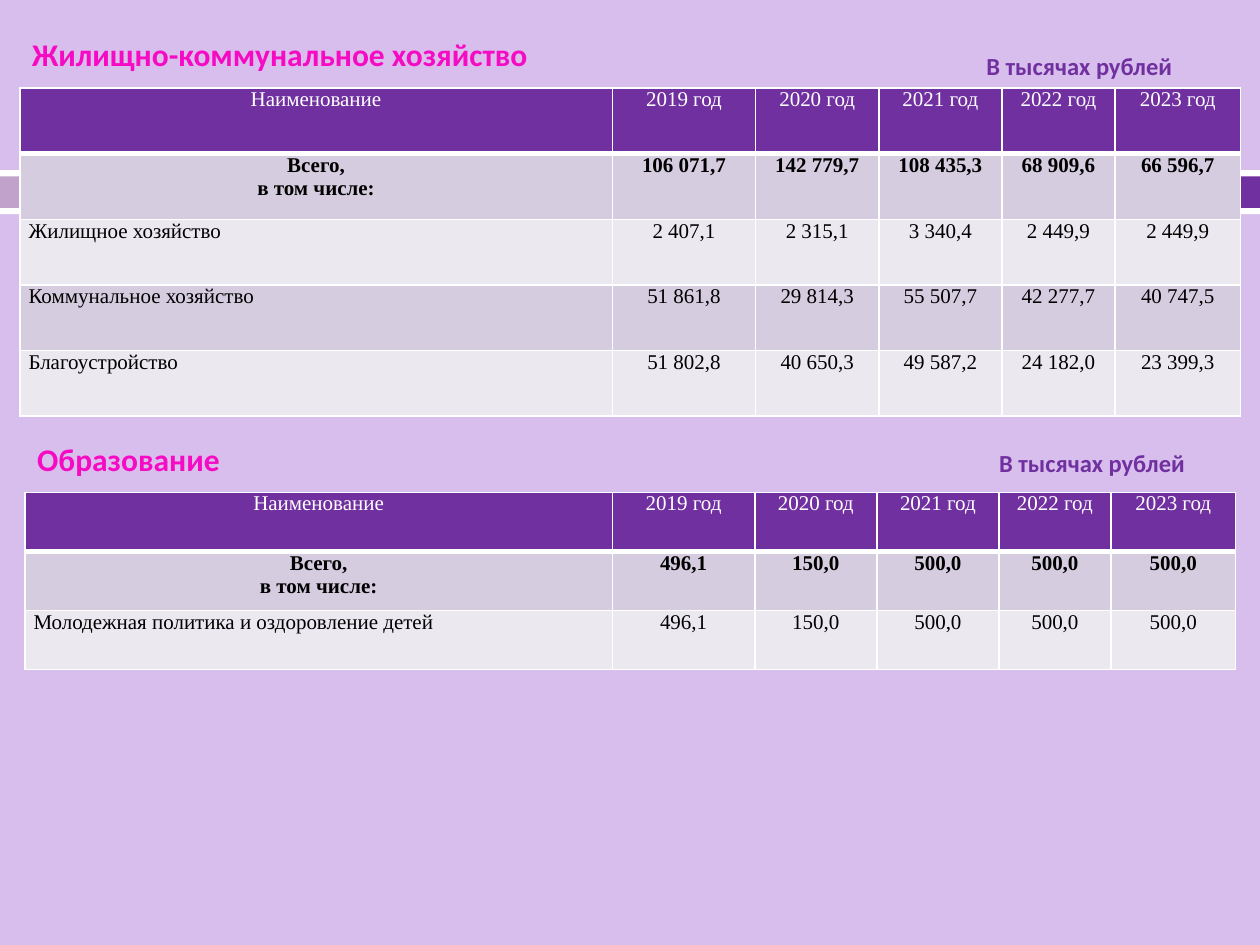
"""Build a slide with two budget tables: housing and utilities, and education."""
import pptx
import pptx.util
import pptx.dml.color
import pptx.enum.shapes
import pptx.enum.text
import pptx.oxml.ns
import lxml.etree

Pt = pptx.util.Pt
ALIGN = pptx.enum.text.PP_ALIGN

COLORS = {
    "background": "D8BEEC", "white": "FFFFFF", "lilac": "C0A2CA",
    "purple": "7030A0", "pink": "F60AC3", "black": "000000",
    "dark_band": "D5CDDF", "light_band": "EBE8F0",
}

HEADER = ("Наименование", "2019 год", "2020 год", "2021 год", "2022 год", "2023 год")
TOTAL = "Всего,\nв том числе:"
UNITS = "В тысячах рублей"

BANDS = [
    (0, 97.2, 720, 25.2, "white"),
    (0, 100.8, 41.76, 18, "lilac"),
    (46.8, 100.8, 673.2, 18, "purple"),
]

TABLES = [
    {
        "at": (11.3, 50.4), "row_height": 37.5,
        "widths": (338.6, 81.9, 70.4, 70.4, 64.6, 71.8),
        "rows": [
            HEADER,
            (TOTAL, "106 071,7", "142 779,7", "108 435,3", "68 909,6", "66 596,7"),
            ("Жилищное хозяйство", "2 407,1", "2 315,1", "3 340,4", "2 449,9", "2 449,9"),
            ("Коммунальное хозяйство", "51 861,8", "29 814,3", "55 507,7", "42 277,7", "40 747,5"),
            ("Благоустройство", "51 802,8", "40 650,3", "49 587,2", "24 182,0", "23 399,3"),
        ],
    },
    {
        "at": (14.2, 281.3), "row_height": 33.8,
        "widths": (335.8, 81.3, 69.8, 69.8, 63.9, 71.4),
        "rows": [
            HEADER,
            (TOTAL, "496,1", "150,0", "500,0", "500,0", "500,0"),
            ("Молодежная политика и оздоровление детей", "496,1", "150,0", "500,0", "500,0", "500,0"),
        ],
    },
]

LABELS = [
    ("Жилищно-коммунальное хозяйство", 11.3, 16.6, 300.2, 29.1, 18, "pink", False),
    ("Образование", 14.2, 247.7, 119.5, 29.1, 18, "pink", False),
    (UNITS, 556.6, 25.9, 163.4, 33.8, 14, "purple", True),
    (UNITS, 563.8, 252.7, 130.3, 33.8, 14, "purple", True),
]


def rgb(name):
    return pptx.dml.color.RGBColor.from_string(COLORS[name])


def paint(fill, name):
    fill.solid()
    fill.fore_color.rgb = rgb(name)


def style_font(font, name, size, color, bold):
    font.name, font.size, font.bold = name, Pt(size), bold
    font.color.rgb = rgb(color)


def add_borders(cell, bottom):
    tc_pr = cell._tc.get_or_add_tcPr()
    qn = pptx.oxml.ns.qn
    for side, width in (("L", 1), ("R", 1), ("T", 1), ("B", bottom)):
        ln = lxml.etree.SubElement(tc_pr, qn(f"a:ln{side}"), w=str(Pt(width)))
        solid = lxml.etree.SubElement(ln, qn("a:solidFill"))
        lxml.etree.SubElement(solid, qn("a:srgbClr"), val=COLORS["white"])


def fill_cell(cell, text, row, col):
    header = row == 0
    add_borders(cell, 3 if header else 1)
    paint(cell.fill, "purple" if header else "dark_band" if row % 2 else "light_band")
    cell.margin_left = cell.margin_right = Pt(5)
    cell.margin_top = cell.margin_bottom = 0
    cell.text = text
    for p in cell.text_frame.paragraphs:
        p.alignment = ALIGN.JUSTIFY if col == 0 and row > 1 else ALIGN.CENTER
        style_font(p.font, "Times New Roman", 12, "white" if header else "black", row == 1)


def add_budget_table(slide, data):
    rows, widths, height = data["rows"], data["widths"], data["row_height"]
    left, top = data["at"]
    table = slide.shapes.add_table(
        len(rows), len(widths), Pt(left), Pt(top),
        Pt(sum(widths)), Pt(height * len(rows))).table
    for column, width in zip(table.columns, widths):
        column.width = Pt(width)
    for i, values in enumerate(rows):
        table.rows[i].height = Pt(height)
        for j, text in enumerate(values):
            fill_cell(table.cell(i, j), text, i, j)


def add_label(slide, text, left, top, width, height, size, color, wrap):
    tf = slide.shapes.add_textbox(Pt(left), Pt(top), Pt(width), Pt(height)).text_frame
    tf.word_wrap = wrap
    if not wrap:
        tf.auto_size = pptx.enum.text.MSO_AUTO_SIZE.SHAPE_TO_FIT_TEXT
    p = tf.paragraphs[0]
    p.text = text
    style_font(p.font, "Calibri", size, color, True)


def main():
    prs = pptx.Presentation()
    prs.slide_width, prs.slide_height = Pt(720), Pt(540)
    slide = prs.slides.add_slide(prs.slide_layouts[6])
    paint(slide.background.fill, "background")
    for left, top, width, height, color in BANDS:
        sp = slide.shapes.add_shape(
            pptx.enum.shapes.MSO_SHAPE.RECTANGLE, Pt(left), Pt(top), Pt(width), Pt(height))
        sp.shadow.inherit = False
        sp.line.fill.background()
        paint(sp.fill, color)
    for data in TABLES:
        add_budget_table(slide, data)
    for label in LABELS:
        add_label(slide, *label)
    prs.save("out.pptx")


if __name__ == "__main__":
    main()
